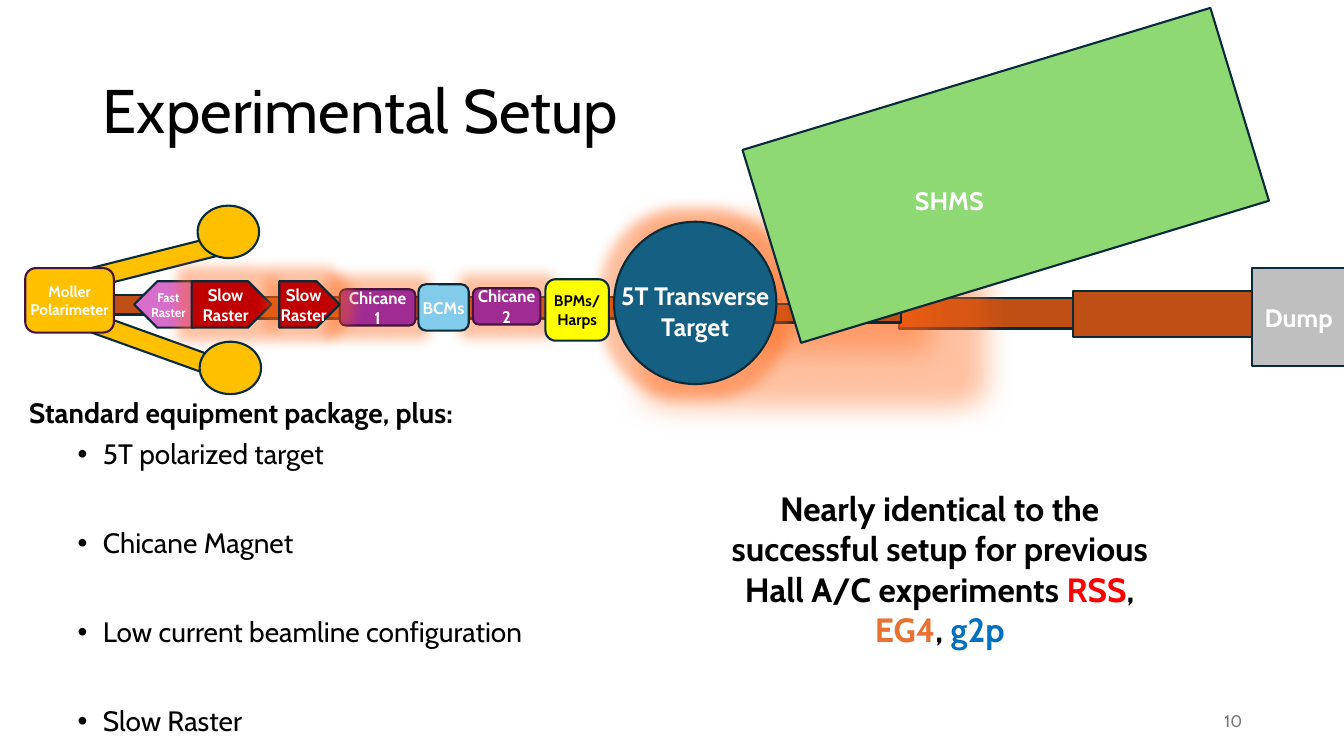
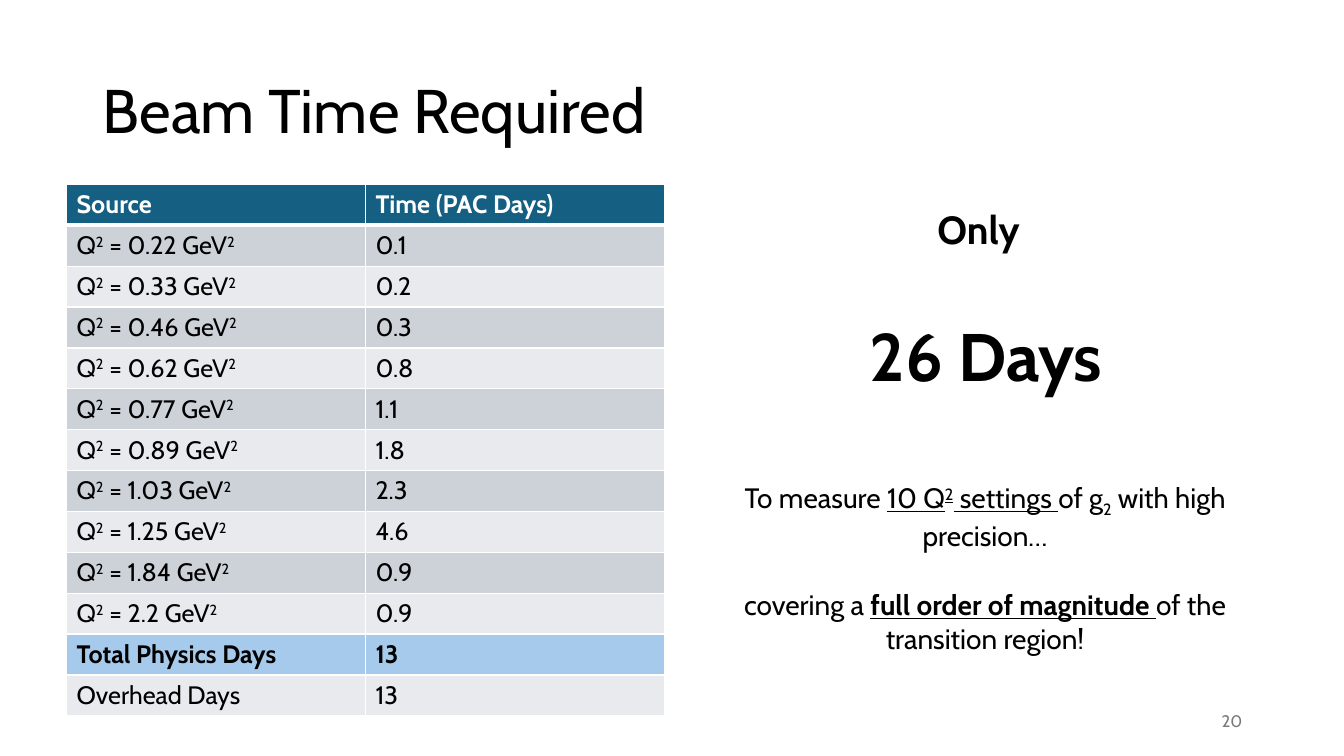
from lxml import etree
from pptx import Presentation
from pptx.dml.color import RGBColor
from pptx.enum.shapes import MSO_SHAPE
from pptx.enum.text import MSO_ANCHOR, MSO_AUTO_SIZE, PP_ALIGN
from pptx.oxml.ns import qn
from pptx.util import Inches, Pt

RECTANGLE, ROUNDED = MSO_SHAPE.RECTANGLE, MSO_SHAPE.ROUNDED_RECTANGLE
ELLIPSE, ARROW_BLOCK = MSO_SHAPE.OVAL, MSO_SHAPE.PENTAGON
LEFT, CENTER, RIGHT = PP_ALIGN.LEFT, PP_ALIGN.CENTER, PP_ALIGN.RIGHT
TOP, MIDDLE = MSO_ANCHOR.TOP, MSO_ANCHOR.MIDDLE
NO_FIT = MSO_AUTO_SIZE.NONE

# The slide is a grid of 1333 columns by 750 rows
CELL = Inches(0.01)
COLUMNS, ROWS = 1333, 750
TITLE_BOX = (92, 40, 1150, 145)
NUMBER_BOX = (942, 695, 300, 40)

FONT = "Cabin"
BLACK, WHITE, GRAY = "000000", "FFFFFF", "797979"
NAVY, PLUM, BLUE = "092A39", "461340", "156082"
GOLD, RUST, RED, PURPLE = "FFC000", "C04F15", "C00000", "A02B93"
GLOW = "FF6414"


def color(hex_text):
    return RGBColor.from_string(hex_text)


def place(origin, box):
    """Turn a grid box, measured from a region's corner, into lengths."""
    left, top, width, height = box
    return [round(cells * CELL) for cells in
            (origin[0] + left, origin[1] + top, width, height)]


def write(frame, paragraphs, size=18, ink=BLACK, bold=False, align=LEFT,
          anchor=TOP, wrap=True, inset=None, spacing=None, gap=None):
    """Fill a frame; a paragraph is a string or a list of (text, changes)."""
    frame.auto_size = NO_FIT
    frame.word_wrap = wrap
    frame.vertical_anchor = anchor
    if inset is not None:
        frame.margin_left = frame.margin_right = inset
        frame.margin_top = frame.margin_bottom = inset
    for index, spans in enumerate(paragraphs):
        para = frame.add_paragraph() if index else frame.paragraphs[0]
        para.alignment = align
        if spacing:
            para.line_spacing = spacing
        if gap and index:
            para.space_before = Pt(gap)
        for text, changes in [(spans, {})] if isinstance(spans, str) else spans:
            span = para.add_run()
            span.text = text
            font = span.font
            font.name, font.size = FONT, Pt(size)
            font.bold = changes.get("bold", bold)
            font.underline = changes.get("underline", False)
            font.color.rgb = color(changes.get("ink", ink))
            if "baseline" in changes:
                span._r.get_or_add_rPr().set("baseline", str(changes["baseline"] * 1000))


def add_text(page, origin, box, paragraphs, **style):
    shape = page.shapes.add_textbox(*place(origin, box))
    write(shape.text_frame, paragraphs, **style)


def add_glow(shape, radius):
    effects = shape._element.spPr.find(qn("a:effectLst"))
    glow = etree.SubElement(effects, qn("a:glow"), rad=str(Pt(radius)))
    tint = etree.SubElement(glow, qn("a:srgbClr"), val=GLOW)
    etree.SubElement(tint, qn("a:alpha"), val="40000")


def add_part(page, origin, kind, box, fill, label="", line=NAVY, turn=0,
             glow=0, size=12, ink=WHITE):
    """Draw one outlined piece of equipment, with its name inside."""
    shape = page.shapes.add_shape(kind, *place(origin, box))
    shape.shadow.inherit = False
    shape.rotation = turn
    shape.fill.solid()
    shape.fill.fore_color.rgb = color(fill)
    shape.line.color.rgb = color(line)
    shape.line.width = Pt(1.5)
    if glow:
        add_glow(shape, glow)
    if label:
        write(shape.text_frame, label.split("\n"), size=size, ink=ink, bold=True,
              align=CENTER, anchor=MIDDLE, wrap=False, inset=0)
    return shape


def add_page(deck, layout, title, number):
    page = deck.slides.add_slide(deck.slide_layouts[layout])
    heading = page.shapes.title
    heading.left, heading.top, heading.width, heading.height = place((0, 0), TITLE_BOX)
    write(heading.text_frame, [title], size=44, anchor=MIDDLE, spacing=0.9)
    add_text(page, (0, 0), NUMBER_BOX, [number], size=12, ink=GRAY,
             align=RIGHT, anchor=MIDDLE)
    return page


def draw_beamline(page, origin):
    def part(*args, **style):
        return add_part(page, origin, *args, **style)

    def label(box, text, size):
        add_text(page, origin, box, text.split("\n"), size=size, ink=WHITE,
                 bold=True, align=CENTER, wrap=False)

    # Polarimeter arms and beam pipe
    part(RECTANGLE, (90, 334, 133, 19), GOLD, turn=19.8)
    part(RECTANGLE, (88, 250, 133, 19), GOLD, turn=345.8)
    part(RECTANGLE, (84, 293, 83, 19), RUST)
    part(RECTANGLE, (147, 295, 477, 21), RUST)
    part(ARROW_BLOCK, (133, 279, 60, 46), "D86ECC", turn=180)
    part(RECTANGLE, (892, 296, 189, 30), RUST)
    part(RECTANGLE, (719, 302, 175, 18), RUST, glow=40)

    # Target and spectrometer
    target = part(ELLIPSE, (609, 220, 161, 161), BLUE, "5T Transverse\nTarget",
                  size=18, glow=18)
    target.text_frame.margin_top = 16 * CELL
    part(RECTANGLE, (755, 74, 485, 200), "8ED973", turn=343.1)
    label((897, 179, 89, 40), "SHMS", 18)
    part(RECTANGLE, (1064, 289, 254, 45), RUST)

    # Chicanes, rasters and monitors
    part(ROUNDED, (337, 287, 75, 36), PURPLE, "Chicane\n1", line=PLUM, glow=18)
    part(ROUNDED, (469, 286, 67, 36), PURPLE, "Chicane\n2", line=PLUM, glow=18)
    for left, width in ((190, 79), (277, 60)):
        part(ARROW_BLOCK, (left, 279, width, 46), RED, "Slow\nRaster", glow=18)
    part(ROUNDED, (415, 282, 50, 46), "83CBEB", "BCMs")
    part(ROUNDED, (541, 277, 63, 61), "FFFF00", "BPMs/\nHarps", size=11, ink=BLACK)
    label((132, 283, 70, 40), "Fast\nRaster", 9)

    # Dump and polarimeter
    part(RECTANGLE, (1242, 266, 92, 97), "BFBFBF", "Dump", size=18)
    part(ROUNDED, (25, 266, 88, 64), GOLD, "Moller\nPolarimeter", line=PLUM, size=11)
    for left, top in ((198, 339), (196, 204)):
        part(ELLIPSE, (left, top, 61, 52), GOLD)


def fill_equipment_list(page, origin):
    add_text(page, origin, (0, 0, 472, 44), ["Standard equipment package, plus:"],
             size=20, bold=True, wrap=False)
    body = page.placeholders[1]
    body.left, body.top, body.width, body.height = place(origin, (48, 45, 1177, 329))
    items = ["5T polarized target", "Chicane Magnet",
             "Low current beamline configuration", "Slow Raster"]
    write(body.text_frame, items, size=20, spacing=0.9, gap=42)
    body.text_frame.paragraphs[0].space_before = Pt(10)
    for para in body.text_frame.paragraphs:
        settings = para._p.get_or_add_pPr()
        settings.set("marL", str(25 * CELL))
        settings.set("indent", str(-25 * CELL))
        bullet_font = etree.SubElement(settings, qn("a:buFont"))
        bullet_font.set("typeface", "Arial")
        etree.SubElement(settings, qn("a:buChar")).set("char", "•")


def build_setup(deck):
    page = add_page(deck, 1, "Experimental Setup", "10")
    draw_beamline(page, (0, 0))
    fill_equipment_list(page, (19, 387))
    remark = [("Nearly identical to the successful setup for previous "
               "Hall A/C experiments", {}), (" RSS", {"ink": "FF0000"}), (", ", {}),
              ("EG4", {"ink": "E97132"}), (", ", {}), ("g2p", {"ink": "0070C0"})]
    add_text(page, (705, 479), (0, 0, 454, 172), [remark], size=24, bold=True,
             align=CENTER)


def set_borders(cell, bottom):
    settings = cell._tc.get_or_add_tcPr()
    for side, width in (("lnL", 1), ("lnR", 1), ("lnT", 1), ("lnB", bottom)):
        edge = etree.SubElement(settings, qn("a:" + side), w=str(Pt(width)))
        paint = etree.SubElement(edge, qn("a:solidFill"))
        etree.SubElement(paint, qn("a:srgbClr"), val=WHITE)


def add_time_table(page, origin):
    times = {"0.22": "0.1", "0.33": "0.2", "0.46": "0.3", "0.62": "0.8", "0.77": "1.1",
             "0.89": "1.8", "1.03": "2.3", "1.25": "4.6", "1.84": "0.9", "2.2": "0.9"}
    raised = ("2", {"baseline": 30})
    rows = [("Source", "Time (PAC Days)")]
    rows += [([("Q", {}), raised, (f" = {energy} GeV", {}), raised], days)
             for energy, days in times.items()]
    rows += [("Total Physics Days", "13"), ("Overhead Days", "13")]
    total = len(rows) - 2
    special_fills = {0: BLUE, total: "A6CAEC"}
    bands = ("E8EAED", "CCD2D8")

    box = place(origin, (0, 0, 593, 527))
    table = page.shapes.add_table(len(rows), 2, *box).table
    for index, values in enumerate(rows):
        table.rows[index].height = box[3] // len(rows)
        for column, value in enumerate(values):
            cell = table.cell(index, column)
            set_borders(cell, 1 if index else 3)
            cell.fill.solid()
            cell.fill.fore_color.rgb = color(special_fills.get(index, bands[index % 2]))
            write(cell.text_frame, [value], bold=index in special_fills,
                  ink=BLACK if index else WHITE)


def add_request(page, origin):
    add_text(page, origin, (232, 0, 103, 57), ["Only"], size=28, bold=True,
             align=CENTER, wrap=False)
    add_text(page, origin, (162, 108, 258, 91), ["26 Days"], size=48, bold=True,
             align=CENTER, wrap=False)
    under = {"underline": True}
    reasons = [
        [("To measure ", {}), ("10 Q", under), ("2", {**under, "baseline": 30}),
         (" settings ", under), ("of g", {}), ("2", {"baseline": -25}),
         (" with high precision…", {})],
        [("covering a ", {}), ("full order of magnitude ", {**under, "bold": True}),
         ("of the transition region!", {})],
    ]
    add_text(page, origin, (0, 273, 580, 167), reasons, size=20, align=CENTER, gap=25)


def build_beam_time(deck):
    page = add_page(deck, 5, "Beam Time Required", "20")
    add_time_table(page, (66, 183))
    add_request(page, (687, 199))


def main():
    deck = Presentation()
    deck.slide_width, deck.slide_height = COLUMNS * CELL, ROWS * CELL
    build_setup(deck)
    build_beam_time(deck)
    deck.save("out.pptx")


if __name__ == "__main__":
    main()
